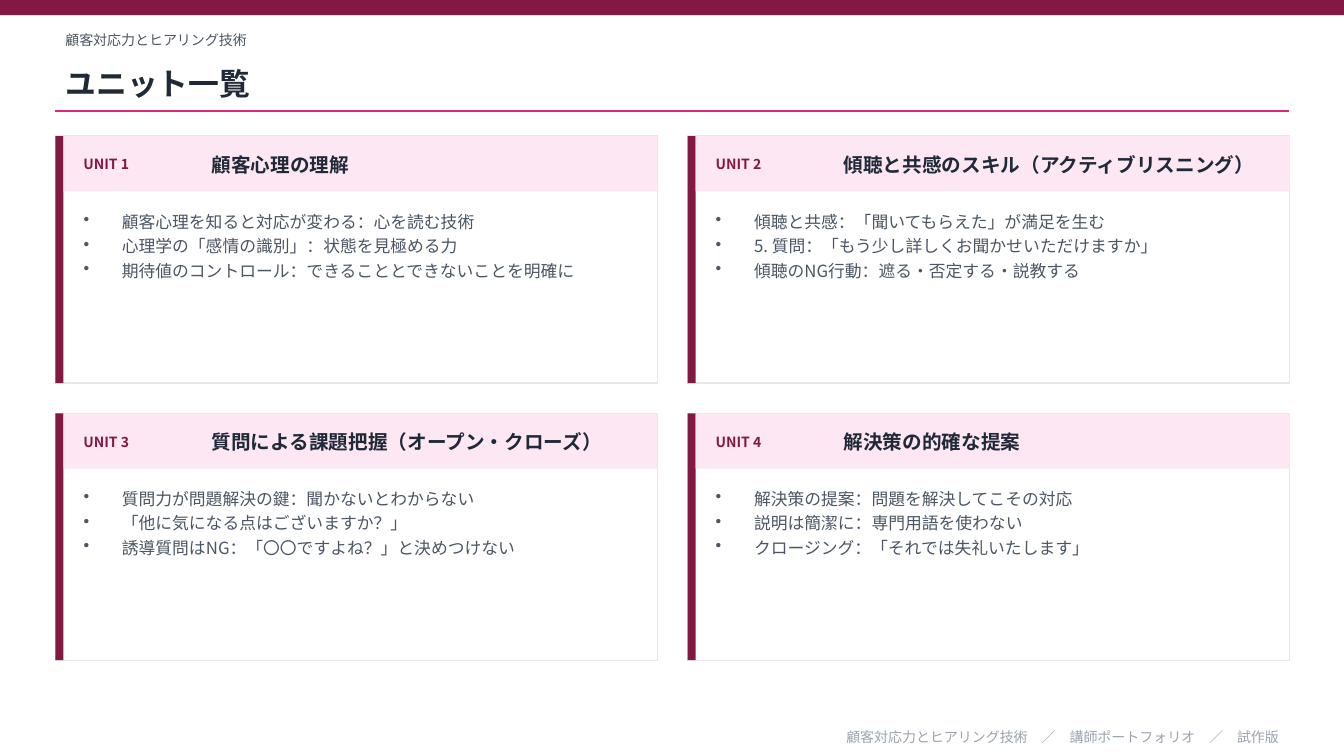
from lxml.etree import SubElement
from pptx import Presentation
from pptx.dml.color import RGBColor
from pptx.enum.shapes import MSO_CONNECTOR, MSO_SHAPE
from pptx.enum.text import MSO_ANCHOR, MSO_AUTO_SIZE, PP_ALIGN
from pptx.oxml.ns import qn
from pptx.util import Inches, Pt

FONT = "Noto Sans CJK JP"
WINE = RGBColor(0x83, 0x18, 0x43)
PINK = RGBColor(0xDB, 0x27, 0x77)
BLUSH = RGBColor(0xFC, 0xE7, 0xF3)
WHITE = RGBColor(0xFF, 0xFF, 0xFF)
BORDER = RGBColor(0xE5, 0xE7, 0xEB)
INK = RGBColor(0x1F, 0x29, 0x37)
SLATE = RGBColor(0x4B, 0x55, 0x63)
MUTED = RGBColor(0x9C, 0xA3, 0xAF)

MARGIN, CONTENT_WIDTH = 0.55, 12.23
CARD_TOP, CARD_WIDTH, CARD_HEIGHT = 1.35, 5.97, 2.45
GAP = 0.3
ACCENT = 0.08

COURSE = "顧客対応力とヒアリング技術"
UNITS = [
    ("顧客心理の理解", [
        "顧客心理を知ると対応が変わる：心を読む技術",
        "心理学の「感情の識別」：状態を見極める力",
        "期待値のコントロール：できることとできないことを明確に",
    ]),
    ("傾聴と共感のスキル（アクティブリスニング）", [
        "傾聴と共感：「聞いてもらえた」が満足を生む",
        "5. 質問：「もう少し詳しくお聞かせいただけますか」",
        "傾聴のNG行動：遮る・否定する・説教する",
    ]),
    ("質問による課題把握（オープン・クローズ）", [
        "質問力が問題解決の鍵：聞かないとわからない",
        "「他に気になる点はございますか？」",
        "誘導質問はNG：「〇〇ですよね？」と決めつけない",
    ]),
    ("解決策の的確な提案", [
        "解決策の提案：問題を解決してこその対応",
        "説明は簡潔に：専門用語を使わない",
        "クロージング：「それでは失礼いたします」",
    ]),
]


def style_paragraph(paragraph, size, color, bold=False, align=PP_ALIGN.LEFT):
    paragraph.alignment = align
    font = paragraph.font
    font.name, font.size, font.bold = FONT, Pt(size), bold
    font.color.rgb = color
    defaults = paragraph._p.get_or_add_pPr().find(qn("a:defRPr"))
    SubElement(defaults, qn("a:ea"), typeface=FONT)


def add_bullet(paragraph):
    properties = paragraph._p.get_or_add_pPr()
    properties.set("marL", str(Inches(0.38)))
    properties.set("indent", str(-Inches(0.38)))
    SubElement(properties, qn("a:buChar"), char="•")


def add_panel(slide, left, top, width, height, fill, border=None):
    panel = slide.shapes.add_shape(
        MSO_SHAPE.RECTANGLE, Inches(left), Inches(top), Inches(width), Inches(height))
    panel.shadow.inherit = False
    panel.fill.solid()
    panel.fill.fore_color.rgb = fill
    if border is None:
        panel.line.fill.background()
    else:
        panel.line.color.rgb = border
        panel.line.width = Pt(1)


def add_text_box(slide, left, top, width, height, anchor=MSO_ANCHOR.MIDDLE):
    frame = slide.shapes.add_textbox(
        Inches(left), Inches(top), Inches(width), Inches(height)).text_frame
    frame.word_wrap = True
    frame.vertical_anchor = anchor
    return frame


def add_label(slide, left, top, width, height, text, size, color, **style):
    paragraph = add_text_box(slide, left, top, width, height).paragraphs[0]
    paragraph.text = text
    style_paragraph(paragraph, size, color, **style)


def add_bullet_list(slide, left, top, width, height, items):
    frame = add_text_box(slide, left, top, width, height, MSO_ANCHOR.TOP)
    frame.text = "\n".join(items)
    for paragraph in frame.paragraphs:
        paragraph.space_after = Pt(3)
        add_bullet(paragraph)
        style_paragraph(paragraph, 12, SLATE)


def set_title(slide, text):
    title = slide.shapes.title
    title.left, title.top = Inches(MARGIN), Inches(0.55)
    title.width, title.height = Inches(CONTENT_WIDTH), Inches(0.55)
    frame = title.text_frame
    frame.text = text
    frame.auto_size = MSO_AUTO_SIZE.NONE
    frame.vertical_anchor = MSO_ANCHOR.MIDDLE
    style_paragraph(frame.paragraphs[0], 22, INK, bold=True)


def add_title_rule(slide):
    rule = slide.shapes.add_connector(
        MSO_CONNECTOR.STRAIGHT, Inches(MARGIN), Inches(1.1),
        Inches(MARGIN + CONTENT_WIDTH), Inches(1.1))
    rule.line.color.rgb = PINK
    rule.line.width = Pt(1)
    SubElement(rule._element.spPr, qn("a:effectLst"))


def add_unit_card(slide, left, top, number, heading, topics):
    add_panel(slide, left, top, CARD_WIDTH, CARD_HEIGHT, WHITE, BORDER)
    add_panel(slide, left, top, ACCENT, CARD_HEIGHT, WINE)
    add_panel(slide, left + ACCENT, top, CARD_WIDTH - ACCENT, 0.55, BLUSH)
    add_label(slide, left + 0.18, top + 0.08, 1.2, 0.4, f"UNIT {number}", 10, WINE, bold=True)
    add_label(slide, left + 1.45, top + 0.08, 4.37, 0.4, heading, 14, INK, bold=True)
    add_bullet_list(slide, left + 0.18, top + 0.7, 5.61, 1.6, topics)


def main():
    deck = Presentation()
    deck.slide_width, deck.slide_height = Inches(13.33), Inches(7.5)
    slide = deck.slides.add_slide(deck.slide_layouts.get_by_name("Title Only"))

    add_panel(slide, 0, 0, 13.33, 0.15, WINE)
    add_label(slide, MARGIN, 0.25, CONTENT_WIDTH, 0.3, COURSE, 10, SLATE)
    set_title(slide, "ユニット一覧")
    add_title_rule(slide)

    for index, (heading, topics) in enumerate(UNITS):
        row, column = divmod(index, 2)
        left = MARGIN + column * (CARD_WIDTH + GAP)
        top = CARD_TOP + row * (CARD_HEIGHT + GAP)
        add_unit_card(slide, left, top, index + 1, heading, topics)

    add_label(slide, MARGIN, 7.2, CONTENT_WIDTH, 0.22,
              f"{COURSE}　／　講師ポートフォリオ　／　試作版", 10, MUTED, align=PP_ALIGN.RIGHT)
    deck.save("out.pptx")


if __name__ == "__main__":
    main()
